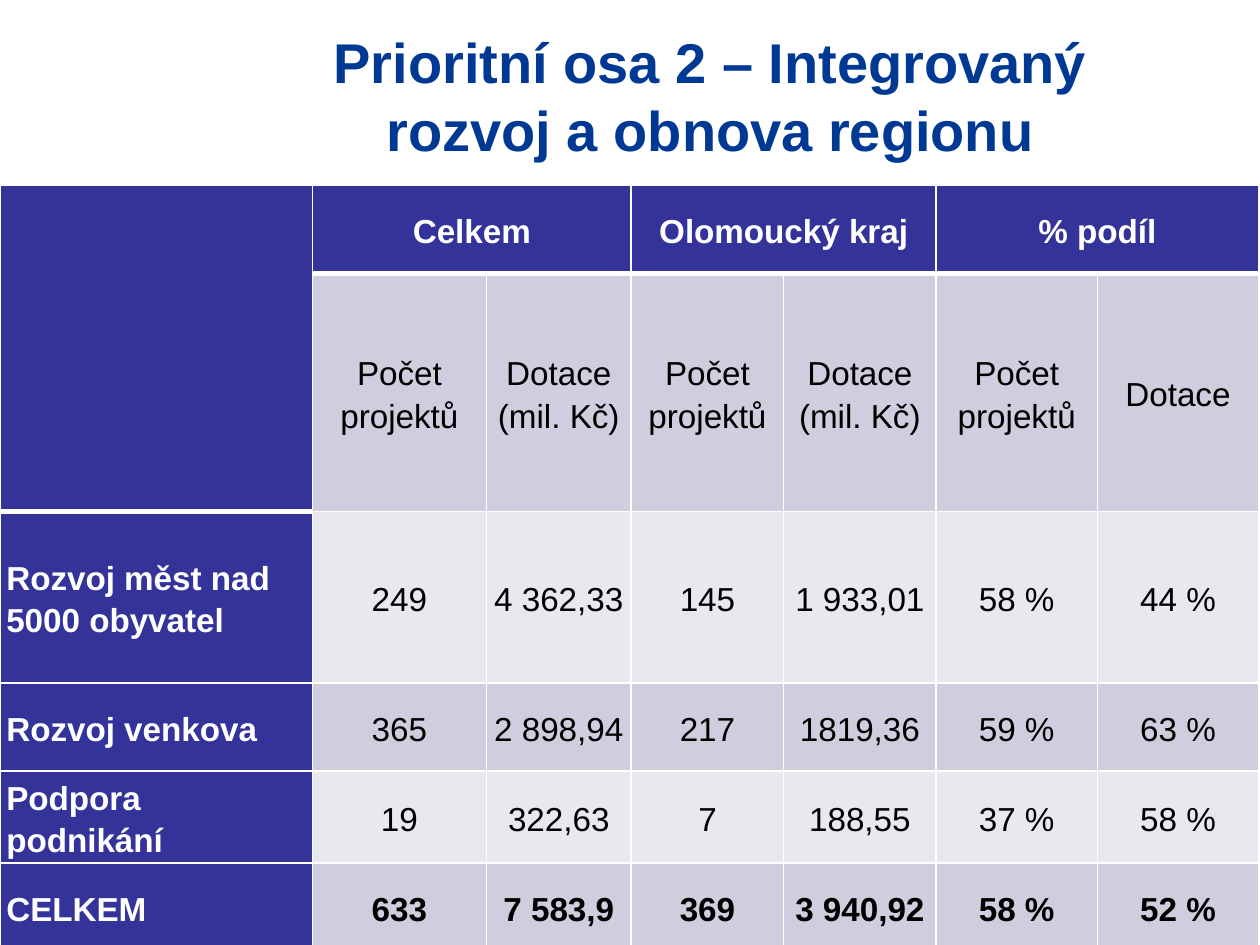
from lxml.etree import SubElement
from pptx import Presentation
from pptx.dml.color import RGBColor as Rgb
from pptx.enum.text import MSO_ANCHOR as Anchor, PP_ALIGN as Align
from pptx.oxml import parse_xml
from pptx.oxml.ns import nsdecls, qn
from pptx.util import Inches, Pt

HEX = {"title": "003994", "head": "333399", "dark": "CECEDE",
       "light": "E8E8EF", "white": "FFFFFF", "black": "000000"}
COLS = [2.48, 1.38, 1.15, 1.21, 1.21, 1.28, 1.28]
ROWS = [0.7, 1.89, 1.36, 0.7, 0.7, 0.7]
COUNT, GRANT = "Počet projektů", "Dotace\n(mil. Kč)"
DATA = [
    ["", "Celkem", "", "Olomoucký kraj", "", "% podíl", ""],
    ["", COUNT, GRANT, COUNT, GRANT, COUNT, "Dotace"],
    ["Rozvoj měst nad 5000 obyvatel", "249", "4 362,33", "145", "1 933,01", "58 %", "44 %"],
    ["Rozvoj venkova", "365", "2 898,94", "217", "1819,36", "59 %", "63 %"],
    ["Podpora podnikání", "19", "322,63", "7", "188,55", "37 %", "58 %"],
    ["CELKEM", "633", "7 583,9", "369", "3 940,92", "58 %", "52 %"],
]


def put(frame, text, size=19, color="black", bold=False, align=Align.CENTER, space=None):
    """Write text into a frame, one paragraph per line."""
    for i, line in enumerate(text.split("\n")):
        para = frame.add_paragraph() if i else frame.paragraphs[0]
        para.alignment = align
        if space:
            para.line_spacing = space
        run = para.add_run()
        run.text = line
        font = run.font
        font.name, font.size, font.bold = "Arial", Pt(size), bold
        font.color.rgb = Rgb.from_string(HEX[color])


def edge(cell, wide):
    """Give a cell white borders, with the sides in wide set thicker."""
    props = cell._tc.get_or_add_tcPr()
    for i, side in enumerate("LRTB"):
        width = Pt(3 if side in wide else 1)
        line = parse_xml(f'<a:ln{side} {nsdecls("a")} w="{width}"/>')
        fill = SubElement(line, qn("a:solidFill"))
        SubElement(fill, qn("a:srgbClr"), val=HEX["white"])
        props.insert(i, line)


def title(slide, left, top, width, height):
    """Place the slide title in its box."""
    frame = slide.shapes.add_textbox(left, top, width, height).text_frame
    frame.word_wrap = True
    frame.vertical_anchor = Anchor.MIDDLE
    put(frame, "Prioritní osa 2 – Integrovaný rozvoj a obnova regionu",
        size=32, color="title", bold=True)


def style(cell, row, col):
    """Fill, border and write one table cell."""
    head = row == 0 or col == 0
    shade = "head" if head else "dark" if row % 2 else "light"
    cell.fill.solid()
    cell.fill.fore_color.rgb = Rgb.from_string(HEX[shade])
    low = row == 0 or (row == 1 and col == 0)
    high = row == 1 or (row == 2 and col == 0)
    edge(cell, "B" * low + "T" * high)
    cell.vertical_anchor = Anchor.MIDDLE
    cell.margin_left = cell.margin_right = Inches(0.05)
    cell.margin_top = cell.margin_bottom = 0
    text = DATA[row][col]
    if text:
        put(cell.text_frame, text, color="white" if head else "black",
            bold=head or row == len(DATA) - 1, space=1.15,
            align=Align.CENTER if col else Align.LEFT)


def table(slide, left, top, width, height):
    """Place the table of projects and grants in its box."""
    grid = slide.shapes.add_table(len(ROWS), len(COLS), left, top, width, height).table
    for col, size in zip(grid.columns, COLS):
        col.width = Inches(size)
    for row, size in zip(grid.rows, ROWS):
        row.height = Inches(size)
    for row in range(len(ROWS)):
        for col in range(len(COLS)):
            style(grid.cell(row, col), row, col)
    grid.cell(0, 0).merge(grid.cell(1, 0))
    for col in range(1, len(COLS), 2):
        grid.cell(0, col).merge(grid.cell(0, col + 1))


def main():
    """Build the slide and save it."""
    deck = Presentation()
    deck.slide_width, deck.slide_height = Inches(10), Inches(7.5)
    slide = deck.slides.add_slide(deck.slide_layouts[6])
    title(slide, Inches(2.42), Inches(0.13), Inches(6.44), Inches(1.25))
    table(slide, Inches(0), Inches(1.47), Inches(10), Inches(6.04))
    deck.save("out.pptx")


if __name__ == "__main__":
    main()
